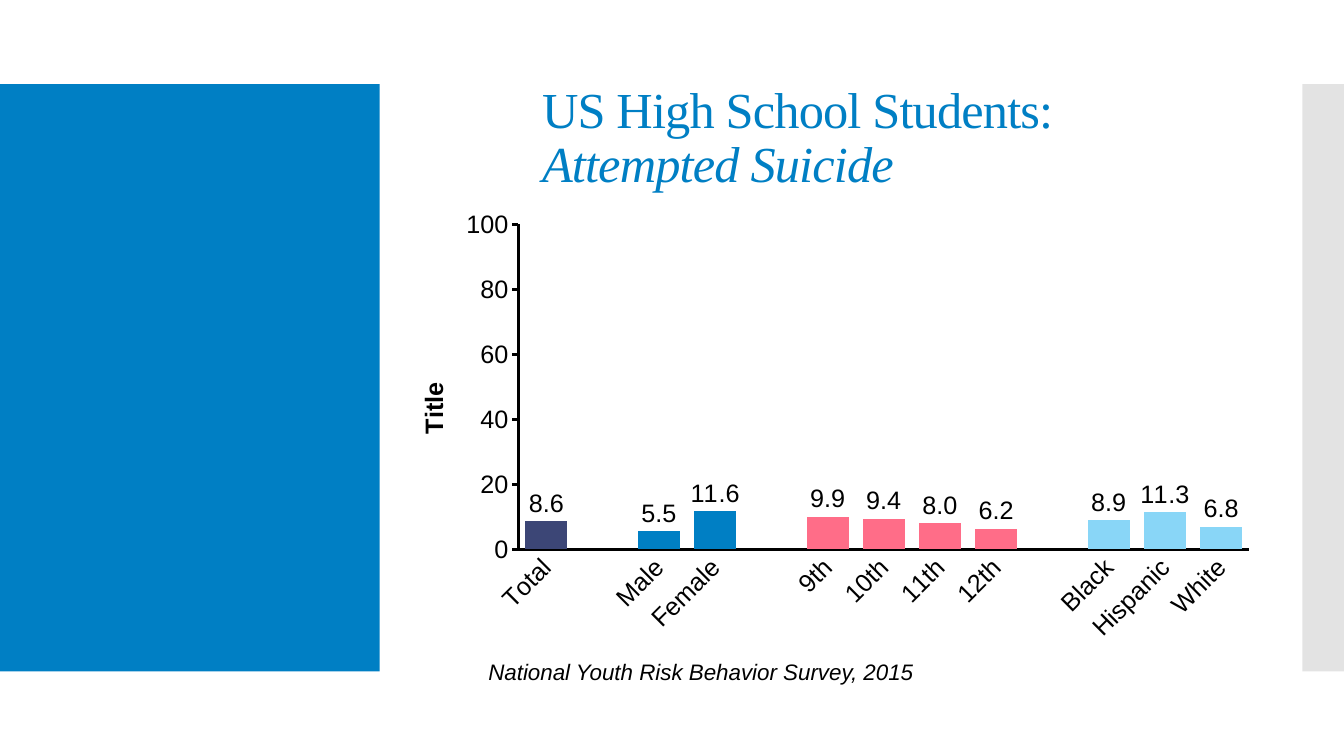
import lxml.etree
import pptx
import pptx.chart.data
import pptx.dml.color
import pptx.enum.chart
import pptx.enum.shapes
import pptx.enum.text
import pptx.oxml
import pptx.oxml.ns
import pptx.util

Cm = pptx.util.Cm
Pt = pptx.util.Pt
qn = pptx.oxml.ns.qn

BLUE = "007FC4"
NAVY = "3C4676"
PINK = "FF6D88"
SKY = "89D6F7"
BLACK = "000000"

GROUPS = [
    (NAVY, [("Total", 8.6)]),
    (BLUE, [("Male", 5.5), ("Female", 11.6)]),
    (PINK, [("9th", 9.9), ("10th", 9.4), ("11th", 8.0), ("12th", 6.2)]),
    (SKY, [("Black", 8.9), ("Hispanic", 11.3), ("White", 6.8)]),
]


def rgb(value):
    return pptx.dml.color.RGBColor.from_string(value)


def style_font(font, name, size, color, bold=None, italic=None):
    font.name = name
    font.size = Pt(size)
    font.color.rgb = rgb(color)
    font.bold = bold
    font.italic = italic


def add_band(slide, box, color, opacity=100):
    band = slide.shapes.add_shape(pptx.enum.shapes.MSO_SHAPE.RECTANGLE, *map(Cm, box))
    band.shadow.inherit = False
    band.fill.solid()
    band.fill.fore_color.rgb = rgb(color)
    band.line.fill.background()
    if opacity < 100:
        srgb = band.fill._xPr.find(qn("a:solidFill")).find(qn("a:srgbClr"))
        lxml.etree.SubElement(srgb, qn("a:alpha")).set("val", str(opacity * 1000))


def add_heading(slide, box):
    frame = slide.shapes.add_textbox(*map(Cm, box)).text_frame
    frame.word_wrap = True
    frame.vertical_anchor = pptx.enum.text.MSO_ANCHOR.MIDDLE
    heading = frame.paragraphs[0]
    heading.line_spacing = 0.9
    style_font(heading.font, "Times New Roman", 36, BLUE)
    for words, italic in (("US High School Students: ", None), ("Attempted Suicide", True)):
        run = heading.add_run()
        run.text = words
        run.font.italic = italic
        run.font._element.set("spc", "-60")


def add_citation(slide, box):
    frame = slide.shapes.add_textbox(*map(Cm, box)).text_frame
    frame.word_wrap = True
    citation = frame.paragraphs[0]
    citation.text = "National Youth Risk Behavior Survey, 2015"
    citation.alignment = pptx.enum.text.PP_ALIGN.RIGHT
    style_font(citation.font, "Arial", 16, BLACK, italic=True)


def set_layout(layout, **settings):
    manual = lxml.etree.SubElement(layout, qn("c:manualLayout"))
    for tag, value in settings.items():
        lxml.etree.SubElement(manual, qn("c:" + tag)).set("val", str(value))


def style_axis(axis, tick_mark):
    axis.has_major_gridlines = False
    axis.major_tick_mark = tick_mark
    axis.minor_tick_mark = pptx.enum.chart.XL_TICK_MARK.NONE
    axis.format.line.color.rgb = rgb(BLACK)
    axis.format.line.width = Pt(2)
    style_font(axis.tick_labels.font, "Arial", 18, BLACK)


def add_attempt_chart(slide, box):
    bars = []
    for color, members in GROUPS:
        if bars:
            bars.append(("", None, None))
        bars += [(label, value, color) for label, value in members]

    data = pptx.chart.data.CategoryChartData(number_format="#,##0.0")
    data.categories = [label for label, _, _ in bars]
    data.add_series("Series 1", [value for _, value, _ in bars])
    chart = slide.shapes.add_chart(
        pptx.enum.chart.XL_CHART_TYPE.COLUMN_CLUSTERED, *map(Cm, box), data
    ).chart
    chart.has_legend = False
    chart.has_title = False
    style_font(chart.font, "Arial", 18, BLACK)

    plot = chart.plots[0]
    plot.vary_by_categories = False
    plot.gap_width = 34
    plot.overlap = 100
    series = plot.series[0]
    series.format.fill.solid()
    series.format.fill.fore_color.rgb = rgb(BLUE)
    for index, (_, _, color) in enumerate(bars):
        if color:
            fill = series.points[index].format.fill
            fill.solid()
            fill.fore_color.rgb = rgb(color)

    labels = series.data_labels
    labels.show_value = True
    labels.number_format = "#,##0.0"
    labels.number_format_is_linked = False
    labels.position = pptx.enum.chart.XL_LABEL_POSITION.OUTSIDE_END
    style_font(labels.font, "Arial", 18, BLACK)

    students = chart.category_axis
    style_axis(students, pptx.enum.chart.XL_TICK_MARK.NONE)
    students._element.find(qn("c:txPr")).find(qn("a:bodyPr")).set("rot", "-2700000")

    percent = chart.value_axis
    style_axis(percent, pptx.enum.chart.XL_TICK_MARK.OUTSIDE)
    percent.minimum_scale = 0
    percent.maximum_scale = 100
    percent.major_unit = 20
    percent.tick_labels.number_format = "General"
    percent.tick_labels.number_format_is_linked = False
    caption = percent.axis_title.text_frame
    caption.text = "Title"
    style_font(caption.paragraphs[0].font, "Arial", 18, BLACK, bold=True)
    caption._txBody.find(qn("a:bodyPr")).set("rot", "-5400000")
    caption_layout = percent.axis_title._element.find(qn("c:layout"))
    set_layout(caption_layout, xMode="edge", yMode="edge", x=0.03, y=0.39)

    plot_area = chart._chartSpace.chart.plotArea
    layout = plot_area.find(qn("c:layout"))
    if layout is None:
        layout = pptx.oxml.parse_xml(
            '<c:layout xmlns:c="http://schemas.openxmlformats.org/drawingml/2006/chart"/>'
        )
        plot_area.insert(0, layout)
    set_layout(layout, layoutTarget="inner", xMode="edge", yMode="edge",
               x=0.15, y=0.05, w=0.83, h=0.72)


def build_survey_slide(presentation):
    slide = presentation.slides.add_slide(presentation.slide_layouts[6])
    add_band(slide, (0, 2.12, 9.57, 14.8), BLUE)
    add_band(slide, (32.82, 2.12, 1.05, 14.8), "C8C8C8", opacity=50)
    add_citation(slide, (9.3, 16.46, 13.97, 1.63))
    add_heading(slide, (13.41, 1.09, 17.22, 4.85))
    add_attempt_chart(slide, (9.73, 5.08, 22.2, 11.38))


def main():
    presentation = pptx.Presentation()
    presentation.slide_width = Cm(33.87)
    presentation.slide_height = Cm(19.05)
    build_survey_slide(presentation)
    presentation.save("out.pptx")


if __name__ == "__main__":
    main()
